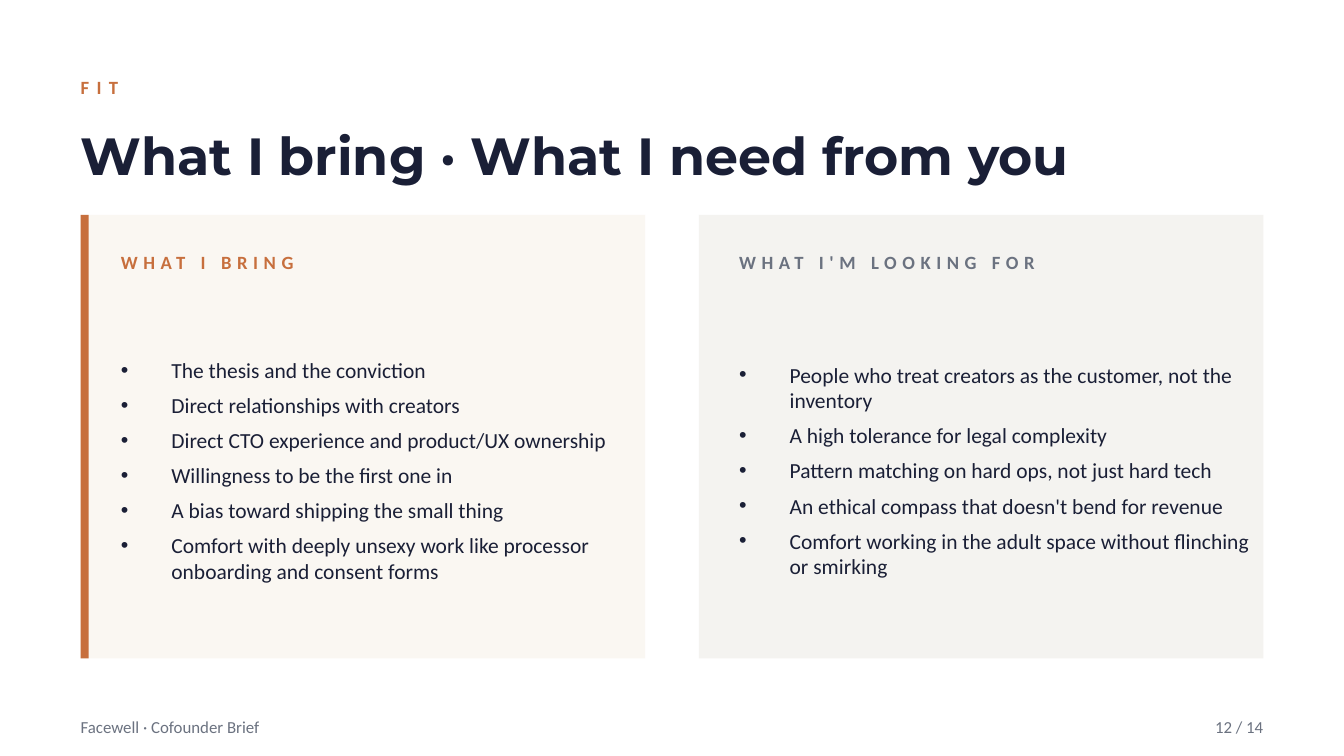
"""Build the slide that sets what I bring beside what I need from a cofounder."""
from lxml import etree
from pptx import Presentation
from pptx.dml.color import RGBColor
from pptx.enum.shapes import MSO_SHAPE
from pptx.enum.text import MSO_ANCHOR, MSO_AUTO_SIZE, PP_ALIGN
from pptx.oxml.ns import qn
from pptx.util import Inches, Pt

RECTANGLE = MSO_SHAPE.RECTANGLE
MIDDLE = MSO_ANCHOR.MIDDLE
NO_FIT = MSO_AUTO_SIZE.NONE
LEFT, RIGHT = PP_ALIGN.LEFT, PP_ALIGN.RIGHT

COLORS = {
    "paper": "FFFFFF",
    "accent": "C76F3D",
    "ink": "1A1F36",
    "muted": "6B7280",
    "cream": "FAF7F2",
    "stone": "F4F3F0",
}

KICKER = "FIT"
TITLE = "What I bring · What I need from you"
FOOTER = "Facewell · Cofounder Brief"
PAGE_NUMBER = "12 / 14"
PANELS = [
    {
        "heading": "WHAT I BRING", "color": "accent", "fill": "cream", "bar": True,
        "items": [
            "The thesis and the conviction",
            "Direct relationships with creators",
            "Direct CTO experience and product/UX ownership",
            "Willingness to be the first one in",
            "A bias toward shipping the small thing",
            "Comfort with deeply unsexy work like processor onboarding and consent forms",
        ],
    },
    {
        "heading": "WHAT I'M LOOKING FOR", "color": "muted", "fill": "stone", "bar": False,
        "items": [
            "People who treat creators as the customer, not the inventory",
            "A high tolerance for legal complexity",
            "Pattern matching on hard ops, not just hard tech",
            "An ethical compass that doesn't bend for revenue",
            "Comfort working in the adult space without flinching or smirking",
        ],
    },
]

WIDTH = 10
HEIGHT = WIDTH * 9 / 16
MARGIN, GAP, INSET = 0.6, 0.4, 0.3
PANEL_TOP, PANEL_HEIGHT, BAR_WIDTH = 1.6, 3.3, 0.06
PANEL_WIDTH = (WIDTH - 2 * MARGIN - GAP) / 2
TEXT_WIDTH = 3.8
FOOTER_TOP, FOOTER_HEIGHT, NUMBER_WIDTH = 5.28, 0.25, 1
INDENT = Pt(27)


def color(name):
    return RGBColor.from_string(COLORS[name])


def add_block(page, place, fill):
    block = page.shapes.add_shape(RECTANGLE, *map(Inches, place))
    block.shadow.inherit = False
    block.fill.solid()
    block.fill.fore_color.rgb = color(fill)
    block.line.fill.background()


def add_bullet(para):
    properties = para._p.get_or_add_pPr()
    properties.set("marL", str(INDENT))
    properties.set("indent", str(-INDENT))
    etree.SubElement(properties, qn("a:buChar")).set("char", "•")


def write(page, place, text, box=None, size=10, font="Calibri", tint="ink",
          bold=False, tracking=0, align=LEFT, bullets=False, after=0):
    """Write one string, or a list of paragraphs, in a placeholder or a new box."""
    if box is None:
        box = page.shapes.add_textbox(*map(Inches, place))
    else:
        box.left, box.top, box.width, box.height = map(Inches, place)
        box.element.getparent().append(box.element)
    frame = box.text_frame
    frame.word_wrap = True
    frame.auto_size = NO_FIT
    frame.vertical_anchor = MIDDLE
    frame.margin_left = frame.margin_right = frame.margin_top = frame.margin_bottom = 0
    lines = [text] if isinstance(text, str) else text
    for number, line in enumerate(lines):
        para = frame.add_paragraph() if number else frame.paragraphs[0]
        if bullets:
            add_bullet(para)
        para.alignment = align
        para.space_before = Pt(0)
        para.space_after = Pt(after)
        span = para.add_run()
        span.text = line
        span.font.name = font
        span.font.size = Pt(size)
        span.font.bold = bold
        span.font.color.rgb = color(tint)
        if tracking:
            span.font._element.set("spc", str(tracking * 100))


def add_panel(page, left, panel, body):
    add_block(page, (left, PANEL_TOP, PANEL_WIDTH, PANEL_HEIGHT), panel["fill"])
    if panel["bar"]:
        add_block(page, (left, PANEL_TOP, BAR_WIDTH, PANEL_HEIGHT), panel["color"])
    text_left = left + INSET
    write(page, (text_left, PANEL_TOP + 0.2, TEXT_WIDTH, 0.3), panel["heading"],
          tint=panel["color"], bold=True, tracking=3)
    write(page, (text_left, PANEL_TOP + 0.6, TEXT_WIDTH, 2.6), panel["items"],
          box=body, size=11.5, bullets=True, after=5)


def main():
    deck = Presentation()
    deck.slide_width, deck.slide_height = Inches(WIDTH), Inches(HEIGHT)
    page = deck.slides.add_slide(deck.slide_layouts.get_by_name("Two Content"))
    page.background.fill.solid()
    page.background.fill.fore_color.rgb = color("paper")
    title, *bodies = list(page.placeholders)

    write(page, (MARGIN, 0.5, 8, 0.3), KICKER, tint="accent", bold=True, tracking=4)
    write(page, (MARGIN, 0.8, 9, 0.7), TITLE, box=title, size=28,
          font="Montserrat", bold=True)
    for column, (panel, body) in enumerate(zip(PANELS, bodies)):
        add_panel(page, MARGIN + column * (PANEL_WIDTH + GAP), panel, body)

    write(page, (MARGIN, FOOTER_TOP, 4, FOOTER_HEIGHT), FOOTER, size=9, tint="muted")
    write(page, (WIDTH - MARGIN - NUMBER_WIDTH, FOOTER_TOP, NUMBER_WIDTH, FOOTER_HEIGHT),
          PAGE_NUMBER, size=9, tint="muted", align=RIGHT)
    deck.save("out.pptx")


if __name__ == "__main__":
    main()
